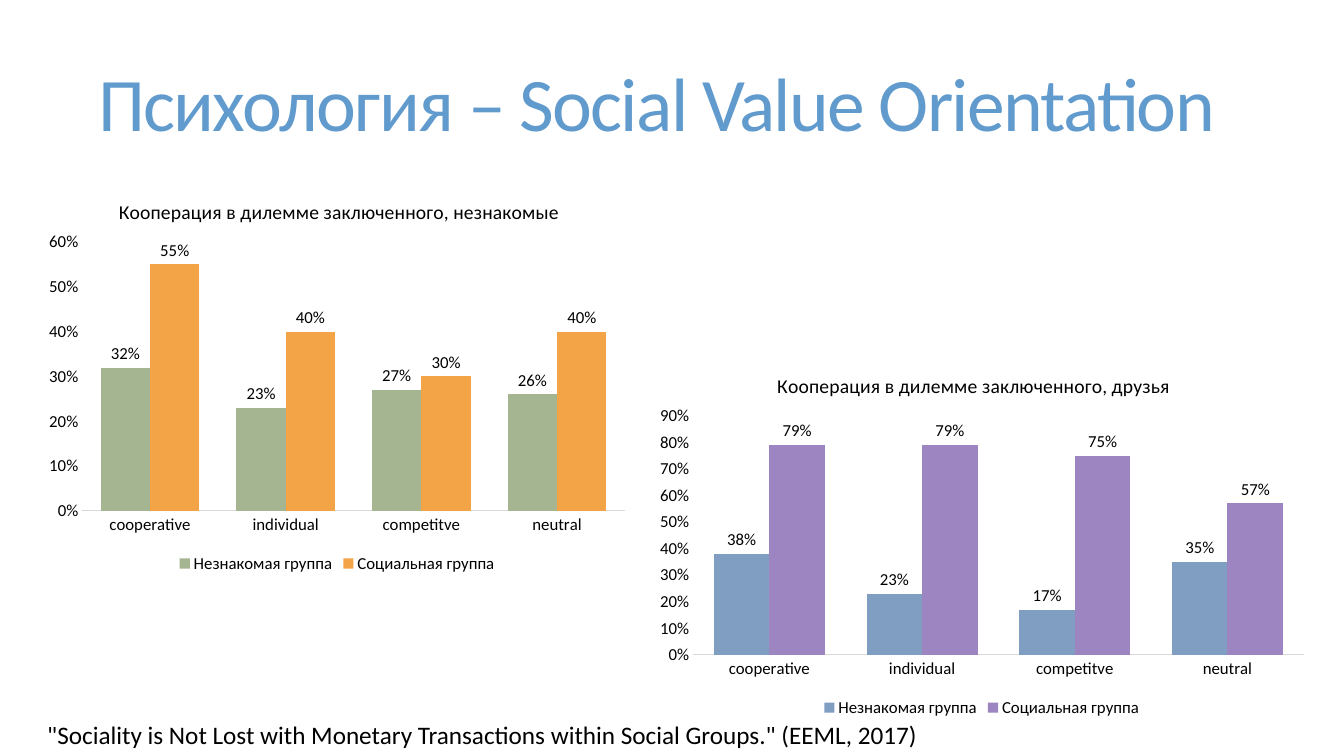
import pptx
import pptx.chart.data
import pptx.dml.color
import pptx.enum.chart
import pptx.enum.text
import pptx.oxml
import pptx.util
from dataclasses import dataclass

Pt = pptx.util.Pt
CHART_NS = "http://schemas.openxmlformats.org/drawingml/2006/chart"


@dataclass(frozen=True)
class Theme:
    font: str = "Calibri"
    heading: str = "619ACD"
    ink: str = "000000"
    axis: str = "D9D9D9"
    green: str = "A5B592"
    orange: str = "F3A447"
    blue: str = "809EC2"
    purple: str = "9C85C0"
    heading_size: float = 54
    source_size: float = 18
    chart_title_size: float = 14
    chart_size: float = 12


class SlideBuilder:
    def __init__(self, slide, theme):
        self.slide = slide
        self.theme = theme

    def rgb(self, value):
        return pptx.dml.color.RGBColor.from_string(value)

    def style(self, font, size, color):
        font.name = self.theme.font
        font.size = Pt(size)
        font.bold = False
        font.color.rgb = self.rgb(color)

    def title(self, text, left, top, width, height):
        heading = self.slide.shapes.title
        heading.left, heading.top = Pt(left), Pt(top)
        heading.width, heading.height = Pt(width), Pt(height)
        frame = heading.text_frame
        frame.text = text
        frame.word_wrap = True
        frame.auto_size = pptx.enum.text.MSO_AUTO_SIZE.NONE
        frame.vertical_anchor = pptx.enum.text.MSO_ANCHOR.MIDDLE
        paragraph = frame.paragraphs[0]
        paragraph.alignment = pptx.enum.text.PP_ALIGN.CENTER
        paragraph.line_spacing = 0.85
        run = paragraph.runs[0]
        self.style(run.font, self.theme.heading_size, self.theme.heading)
        run.font._element.set("spc", "-120")

    def text(self, text, left, top, width, height):
        box = self.slide.shapes.add_textbox(Pt(left), Pt(top), Pt(width), Pt(height))
        frame = box.text_frame
        frame.word_wrap = True
        frame.auto_size = pptx.enum.text.MSO_AUTO_SIZE.SHAPE_TO_FIT_TEXT
        frame.text = text
        self.style(frame.paragraphs[0].runs[0].font, self.theme.source_size, self.theme.ink)

    def layout(self, inner=False, **fractions):
        target = '<c:layoutTarget val="inner"/>' if inner else ""
        modes = "".join(f'<c:{axis}Mode val="edge"/>' for axis in "xy")
        values = "".join(f'<c:{key} val="{value}"/>' for key, value in fractions.items())
        return pptx.oxml.parse_xml(
            f'<c:layout xmlns:c="{CHART_NS}"><c:manualLayout>'
            f"{target}{modes}{values}</c:manualLayout></c:layout>")

    def column_chart(self, title, categories, series, top_value, box, title_at, plot_at):
        theme = self.theme
        data = pptx.chart.data.CategoryChartData(number_format="0%")
        data.categories = categories
        for name, values, _ in series:
            data.add_series(name, values)
        kind = pptx.enum.chart.XL_CHART_TYPE.COLUMN_CLUSTERED
        chart = self.slide.shapes.add_chart(kind, *map(Pt, box), data).chart
        self.style(chart.font, theme.chart_size, theme.ink)

        # Chart title
        chart.has_title = True
        chart.chart_title.text_frame.text = title
        title_run = chart.chart_title.text_frame.paragraphs[0].runs[0]
        self.style(title_run.font, theme.chart_title_size, theme.ink)
        chart.chart_title.include_in_layout = False
        title_xml = chart.chart_title._element
        plot_xml = chart._chartSpace.chart.plotArea
        for parent in (title_xml, plot_xml):
            for old in parent.findall(f"{{{CHART_NS}}}layout"):
                parent.remove(old)
        title_xml.find(f"{{{CHART_NS}}}tx").addnext(self.layout(**title_at))
        plot_xml.insert(0, self.layout(inner=True, **plot_at))

        # Axes
        for axis in (chart.category_axis, chart.value_axis):
            axis.has_major_gridlines = False
            axis.major_tick_mark = pptx.enum.chart.XL_TICK_MARK.NONE
            axis.minor_tick_mark = pptx.enum.chart.XL_TICK_MARK.NONE
            self.style(axis.tick_labels.font, theme.chart_size, theme.ink)
        chart.category_axis.format.line.color.rgb = self.rgb(theme.axis)
        chart.category_axis.format.line.width = Pt(0.75)
        value_axis = chart.value_axis
        value_axis.format.line.fill.background()
        value_axis.minimum_scale, value_axis.maximum_scale = 0, top_value
        value_axis.major_unit = 0.1
        value_axis.tick_labels.number_format = "0%"
        value_axis.tick_labels.number_format_is_linked = False

        # Columns and their labels
        plot = chart.plots[0]
        plot.gap_width, plot.overlap = 75, 0
        plot.vary_by_categories = False
        for columns, (_, _, color) in zip(plot.series, series):
            columns.format.fill.solid()
            columns.format.fill.fore_color.rgb = self.rgb(color)
            labels = columns.data_labels
            labels.show_value = True
            labels.number_format = "0%"
            labels.number_format_is_linked = False
            labels.position = pptx.enum.chart.XL_LABEL_POSITION.OUTSIDE_END
            self.style(labels.font, theme.chart_size, theme.ink)

        # Legend
        chart.has_legend = True
        chart.legend.position = pptx.enum.chart.XL_LEGEND_POSITION.BOTTOM
        chart.legend.include_in_layout = False
        self.style(chart.legend.font, theme.chart_size, theme.ink)


def main():
    deck = pptx.Presentation()
    deck.slide_width, deck.slide_height = Pt(960), Pt(540)
    theme = Theme()
    builder = SlideBuilder(deck.slides.add_slide(deck.slide_layouts[5]), theme)

    builder.title("Психология – Social Value Orientation ", 50.4, 12.24, 848.16, 130.32)

    # Cooperation by value orientation
    orientations = ["cooperative", "individual", "competitve", "neutral"]
    unfamiliar, social = "Незнакомая группа", "Социальная группа"
    builder.column_chart(
        "Кооперация в дилемме заключенного, незнакомые", orientations,
        [(unfamiliar, (0.32, 0.23, 0.27, 0.26), theme.green),
         (social, (0.55, 0.4, 0.3, 0.4), theme.orange)],
        0.6, (26.64, 124.56, 428.4, 288),
        dict(x=0.13, y=0.05), dict(x=0.075, y=0.168, w=0.905, h=0.667))
    builder.column_chart(
        "Кооперация в дилемме заключенного, друзья", orientations,
        [(unfamiliar, (0.38, 0.23, 0.17, 0.35), theme.blue),
         (social, (0.79, 0.79, 0.75, 0.57), theme.purple)],
        0.9, (461.52, 249.12, 479.52, 266.4),
        dict(x=0.19, y=0.054), dict(x=0.07, y=0.18, w=0.91, h=0.641))

    # Source
    builder.text('"Sociality is Not Lost with Monetary Transactions within Social Groups." '
                 "(EEML, 2017)", 26.64, 510.48, 658.8, 28.8)
    deck.save("out.pptx")


if __name__ == "__main__":
    main()
